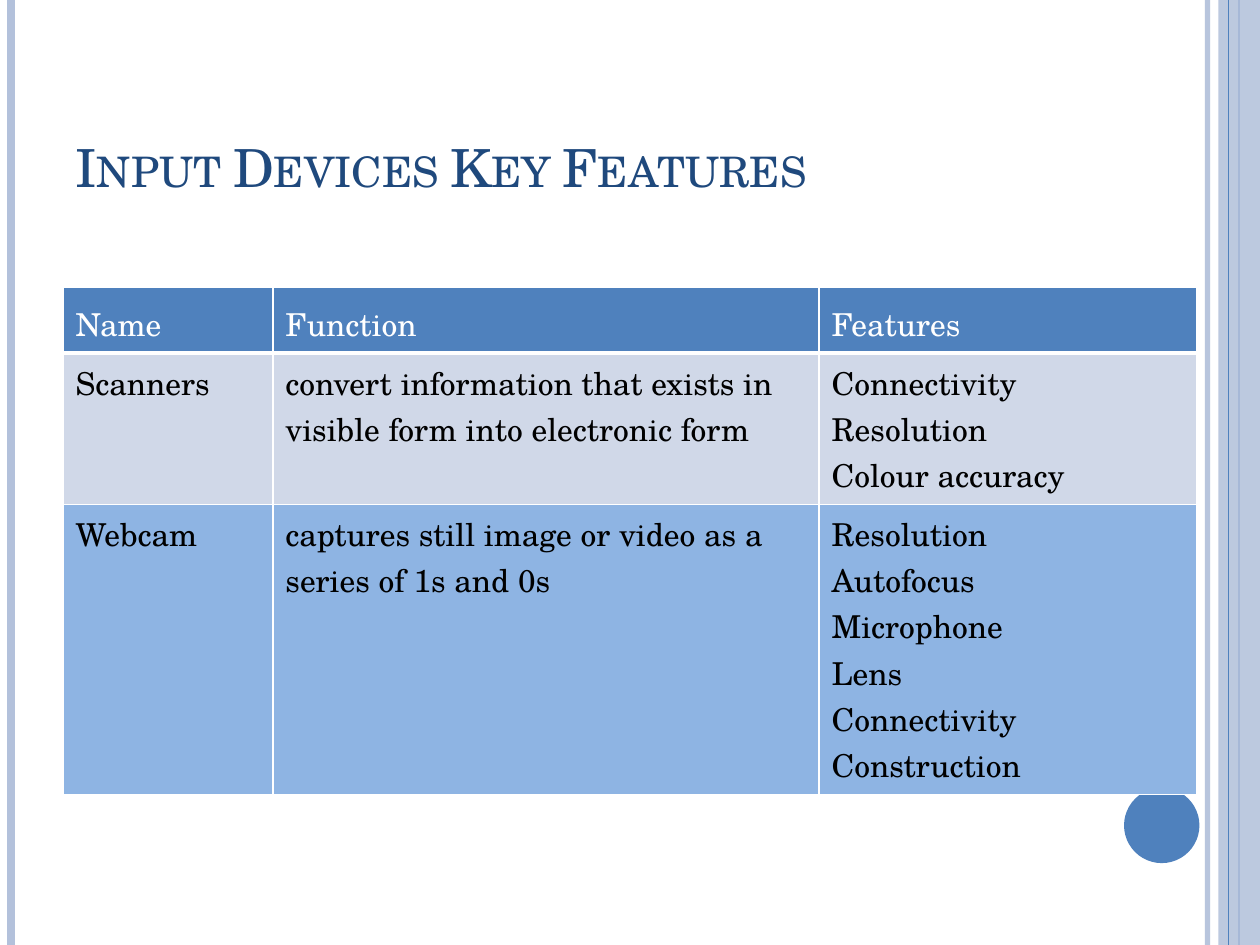
"""Build the slide on key features of input devices."""
from lxml.etree import SubElement
from pptx import Presentation
from pptx.dml.color import RGBColor
from pptx.enum.shapes import MSO_CONNECTOR, MSO_SHAPE
from pptx.enum.text import MSO_ANCHOR, MSO_AUTO_SIZE, PP_ALIGN
from pptx.oxml import parse_xml
from pptx.oxml.ns import nsdecls, qn
from pptx.util import Cm, Pt

FONT = "TeX Gyre Schola"
WHITE = RGBColor(0xFF, 0xFF, 0xFF)
BLACK = RGBColor(0x00, 0x00, 0x00)
NAVY = RGBColor(0x1F, 0x49, 0x7D)
BLUE = RGBColor(0x4F, 0x81, 0xBD)
PALE_BLUE = RGBColor(0xB3, 0xC1, 0xDB)
GREY_BLUE = RGBColor(0xD0, 0xD8, 0xE8)
SKY_BLUE = RGBColor(0x8E, 0xB4, 0xE3)


def set_opacity(fill, percent):
    color = fill._xPr.find(qn("a:solidFill"))[0]
    SubElement(color, qn("a:alpha"), val=str(percent * 1000))


def add_run(paragraph, text, size, color):
    run = paragraph.add_run()
    run.text = text
    run.font.name = FONT
    run.font.size = Pt(size)
    run.font.bold = False
    run.font.color.rgb = color
    return run


presentation = Presentation()
presentation.slide_width = Cm(25.4)
presentation.slide_height = Cm(19.05)
slide = presentation.slides.add_slide(presentation.slide_layouts[5])
shapes = slide.shapes

stripes = [
    (24.34, PALE_BLUE, 3, 93),
    (0.22, PALE_BLUE, 4.5, 100),
    (24.98, BLUE, 1.5, 100),
    (24.77, BLUE, 0.75, 100),
]
for x, color, width, opacity in stripes:
    stripe = shapes.add_connector(MSO_CONNECTOR.STRAIGHT, Cm(x), 0, Cm(x), Cm(19.05))
    stripe.line.color.rgb = color
    stripe.line.width = Pt(width)
    if opacity < 100:
        set_opacity(stripe.line.fill, opacity)
    SubElement(stripe._element.spPr, qn("a:effectLst"))

band = shapes.add_shape(MSO_SHAPE.RECTANGLE, Cm(24.56), 0, Cm(0.84), Cm(19.05))
circle = shapes.add_shape(MSO_SHAPE.OVAL, Cm(22.66), Cm(15.88), Cm(1.52), Cm(1.52))
for shape, color in ((band, PALE_BLUE), (circle, BLUE)):
    shape.shadow.inherit = False
    shape.fill.solid()
    shape.fill.fore_color.rgb = color
    shape.line.fill.background()
set_opacity(band.fill, 87)
band._element.addnext(stripe._element)

title = shapes.title
title.left, title.top, title.width, title.height = Cm(1.27), Cm(0.94), Cm(22.86), Cm(3.18)
title.text_frame.auto_size = MSO_AUTO_SIZE.NONE
title.text_frame.vertical_anchor = MSO_ANCHOR.BOTTOM
paragraph = title.text_frame.paragraphs[0]
paragraph.alignment = PP_ALIGN.LEFT
run = add_run(paragraph, "Input Devices Key Features", 30, NAVY)
run.font._element.set("cap", "small")

rows = [
    (1.3, BLUE, WHITE, 1.14, [["Name"], ["Function"], ["Features"]]),
    (3.04, GREY_BLUE, BLACK, 1.0, [
        ["Scanners"],
        ["convert information that exists in", "visible form into electronic form"],
        ["Connectivity", "Resolution", "Colour accuracy"],
    ]),
    (5.84, SKY_BLUE, BLACK, 1.0, [
        ["Webcam"],
        ["captures still image or video as a", "series of 1s and 0s"],
        ["Resolution", "Autofocus", "Microphone", "Lens", "Connectivity", "Construction"],
    ]),
]
table = shapes.add_table(3, 3, Cm(1.27), Cm(5.8), Cm(22.86), Cm(10.18)).table
for column, width in zip(table.columns, (4.23, 11.01, 7.62)):
    column.width = Cm(width)

for row_index, (height, fill, text_color, spacing, row_texts) in enumerate(rows):
    table.rows[row_index].height = Cm(height)
    for column_index, lines in enumerate(row_texts):
        cell = table.cell(row_index, column_index)
        cell.fill.solid()
        cell.fill.fore_color.rgb = fill
        cell.vertical_anchor = MSO_ANCHOR.TOP
        for line_index, line in enumerate(lines):
            frame = cell.text_frame
            paragraph = frame.add_paragraph() if line_index else frame.paragraphs[0]
            paragraph.line_spacing = spacing
            add_run(paragraph, line, 18, text_color)
        for position, side in enumerate(("lnL", "lnR", "lnT", "lnB")):
            header_edge = (row_index, side) in ((0, "lnB"), (1, "lnT"))
            border = parse_xml(
                f'<a:{side} {nsdecls("a")} w="{Pt(3 if header_edge else 1)}">'
                f'<a:solidFill><a:srgbClr val="{WHITE}"/></a:solidFill></a:{side}>'
            )
            cell._tc.get_or_add_tcPr().insert(position, border)

presentation.save("out.pptx")
